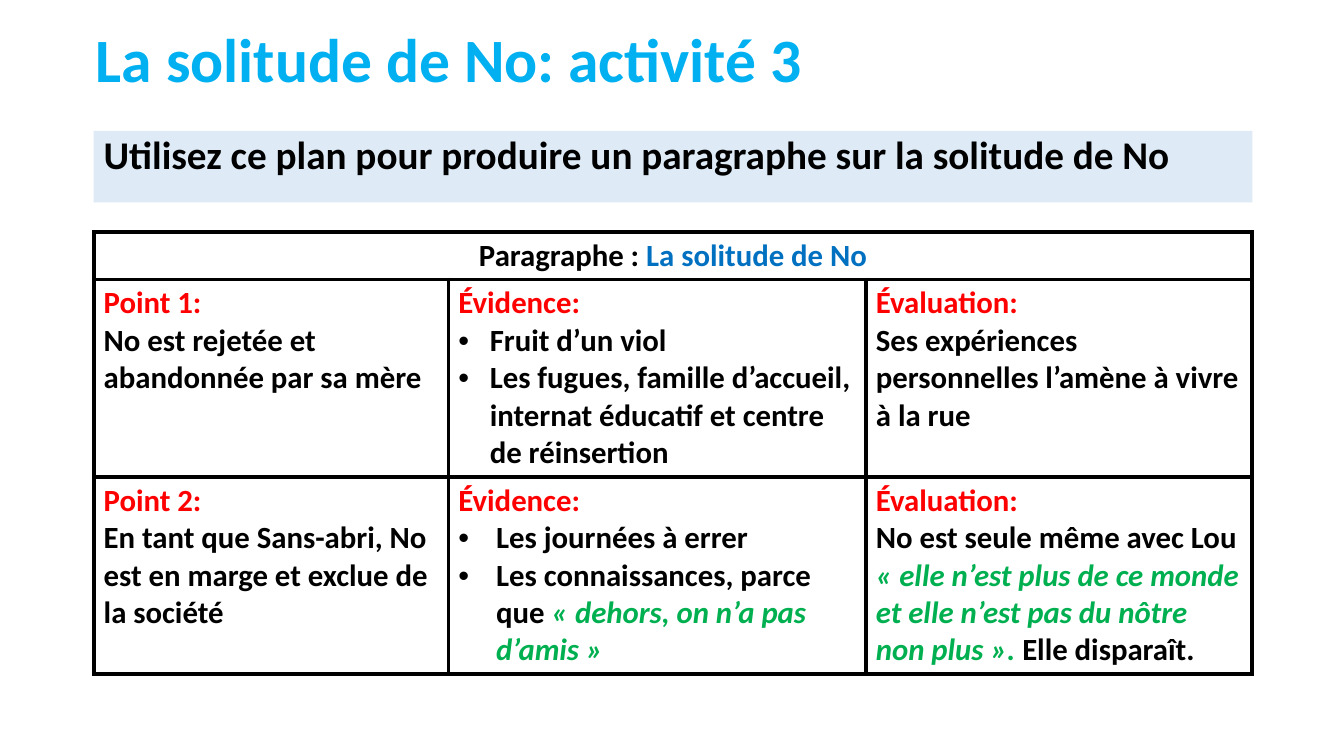
from dataclasses import dataclass

from lxml.etree import SubElement
from pptx import Presentation
from pptx.dml.color import RGBColor as Color
from pptx.enum.text import MSO_ANCHOR as Anchor, MSO_AUTO_SIZE as AutoSize, PP_ALIGN as Align
from pptx.oxml import parse_xml
from pptx.oxml.ns import nsdecls, qn
from pptx.util import Cm, Pt


@dataclass(frozen=True)
class Theme:
    font: str = "Calibri"
    title: str = "00B0F0"
    band: str = "DEEBF7"
    text: str = "000000"
    topic: str = "0070C0"
    heading: str = "FF0000"
    quote: str = "00B050"
    title_size: int = 44
    task_size: int = 28
    table_size: int = 22
    border: int = 3


THEME = Theme()

# Content: a paragraph is a list of (text, role) runs
TITLE = [("La solitude de No: activité 3", "title")]
TASK = [("Utilisez ce plan pour produire un paragraphe sur la solitude de No", "text")]
TABLE_HEADING = [("Paragraphe : ", "text"), ("La solitude de No", "topic")]

# Each row: heading and paragraphs per cell, with the bullet indent of its evidence
ROWS = [
    {
        "bullet_indent": 0.79,
        "cells": [
            ("Point 1:", [[("No est rejetée et abandonnée par sa mère", "text")]]),
            ("Évidence:", [
                [("Fruit d’un viol", "text")],
                [("Les fugues, famille d’accueil, internat éducatif et centre de réinsertion", "text")],
            ]),
            ("Évaluation:", [[("Ses expériences personnelles l’amène à vivre à la rue", "text")]]),
        ],
    },
    {
        "bullet_indent": 0.95,
        "cells": [
            ("Point 2:", [[("En tant que Sans-abri, No est en marge et exclue de la société", "text")]]),
            ("Évidence:", [
                [("Les journées à errer", "text")],
                [("Les connaissances, parce que ", "text"),
                 ("« dehors, on n’a pas d’amis »", "quote")],
            ]),
            ("Évaluation:", [
                [("No est seule même avec Lou ", "text"),
                 ("« elle n’est plus de ce monde et elle n’est pas du nôtre non plus ». ", "quote"),
                 ("Elle disparaît.", "text")],
            ]),
        ],
    },
]
EVIDENCE_COLUMN = 1

# Layout in centimetres
LEFT, WIDTH = 2.36, 29.2
COLUMN_WIDTHS = [8.94, 10.52, 9.74]
ROW_HEIGHTS = [1.2, 4.97, 4.97]


def write(frame, paragraphs, size, align=Align.LEFT, line_spacing=1.0, bullet_from=None, indent=0):
    """Fill a text frame; paragraphs from number bullet_from on get bullets."""
    frame.word_wrap = True
    for number, runs in enumerate(paragraphs):
        paragraph = frame.paragraphs[0] if number == 0 else frame.add_paragraph()
        properties = paragraph._p.get_or_add_pPr()
        bulleted = bullet_from is not None and number >= bullet_from
        offset = Cm(indent) if bulleted else 0
        properties.set("marL", str(offset))
        properties.set("indent", str(-offset))
        if bulleted:
            SubElement(properties, qn("a:buFont"), typeface="Arial")
            SubElement(properties, qn("a:buChar"), char="•")
        else:
            SubElement(properties, qn("a:buNone"))
        paragraph.alignment = align
        paragraph.line_spacing = line_spacing
        paragraph.space_before = Pt(0)
        for text, role in runs:
            run = paragraph.add_run()
            run.text = text
            run.font.name = THEME.font
            run.font.size = Pt(size)
            run.font.bold = True
            run.font.italic = role == "quote"
            run.font.color.rgb = Color.from_string(getattr(THEME, role))


def fill_placeholder(shape, runs, size, anchor, box):
    shape.left, shape.top, shape.width, shape.height = (Cm(length) for length in box)
    frame = shape.text_frame
    frame.auto_size = AutoSize.NONE
    frame.vertical_anchor = anchor
    write(frame, [runs], size, line_spacing=0.9)


def set_borders(cell):
    properties = cell._tc.get_or_add_tcPr()
    for position, side in enumerate(("lnL", "lnR", "lnT", "lnB")):
        properties.insert(position, parse_xml(
            f'<a:{side} {nsdecls("a")} w="{Pt(THEME.border)}"><a:solidFill>'
            f'<a:srgbClr val="{THEME.text}"/></a:solidFill></a:{side}>'))


def add_plan(slide):
    table = slide.shapes.add_table(
        len(ROW_HEIGHTS), len(COLUMN_WIDTHS), Cm(LEFT), Cm(5.84), Cm(WIDTH), Cm(sum(ROW_HEIGHTS))).table
    table.first_row = table.horz_banding = False
    for column, width in zip(table.columns, COLUMN_WIDTHS):
        column.width = Cm(width)
    for row, height in zip(table.rows, ROW_HEIGHTS):
        row.height = Cm(height)
    for cell in table.iter_cells():
        cell.fill.background()
        set_borders(cell)

    # Heading across all columns
    heading_cell = table.cell(0, 0)
    heading_cell.merge(table.cell(0, len(COLUMN_WIDTHS) - 1))
    write(heading_cell.text_frame, [TABLE_HEADING], THEME.table_size, align=Align.CENTER)

    # Points, evidence and evaluation
    for row_number, row in enumerate(ROWS, start=1):
        for column_number, (heading, paragraphs) in enumerate(row["cells"]):
            write(table.cell(row_number, column_number).text_frame,
                  [[(heading, "heading")], *paragraphs], THEME.table_size,
                  bullet_from=1 if column_number == EVIDENCE_COLUMN else None,
                  indent=row["bullet_indent"])


def main():
    presentation = Presentation()
    presentation.slide_width, presentation.slide_height = Cm(33.87), Cm(19.05)
    slide = presentation.slides.add_slide(presentation.slide_layouts[1])

    # Title and task
    fill_placeholder(slide.shapes.title, TITLE, THEME.title_size, Anchor.MIDDLE, (2.16, 0.33, WIDTH, 2.49))
    task = slide.placeholders[1]
    task.fill.solid()
    task.fill.fore_color.rgb = Color.from_string(THEME.band)
    fill_placeholder(task, TASK, THEME.task_size, Anchor.TOP, (LEFT, 3.3, WIDTH, 1.8))

    # Paragraph plan
    add_plan(slide)
    presentation.save("out.pptx")


if __name__ == "__main__":
    main()
